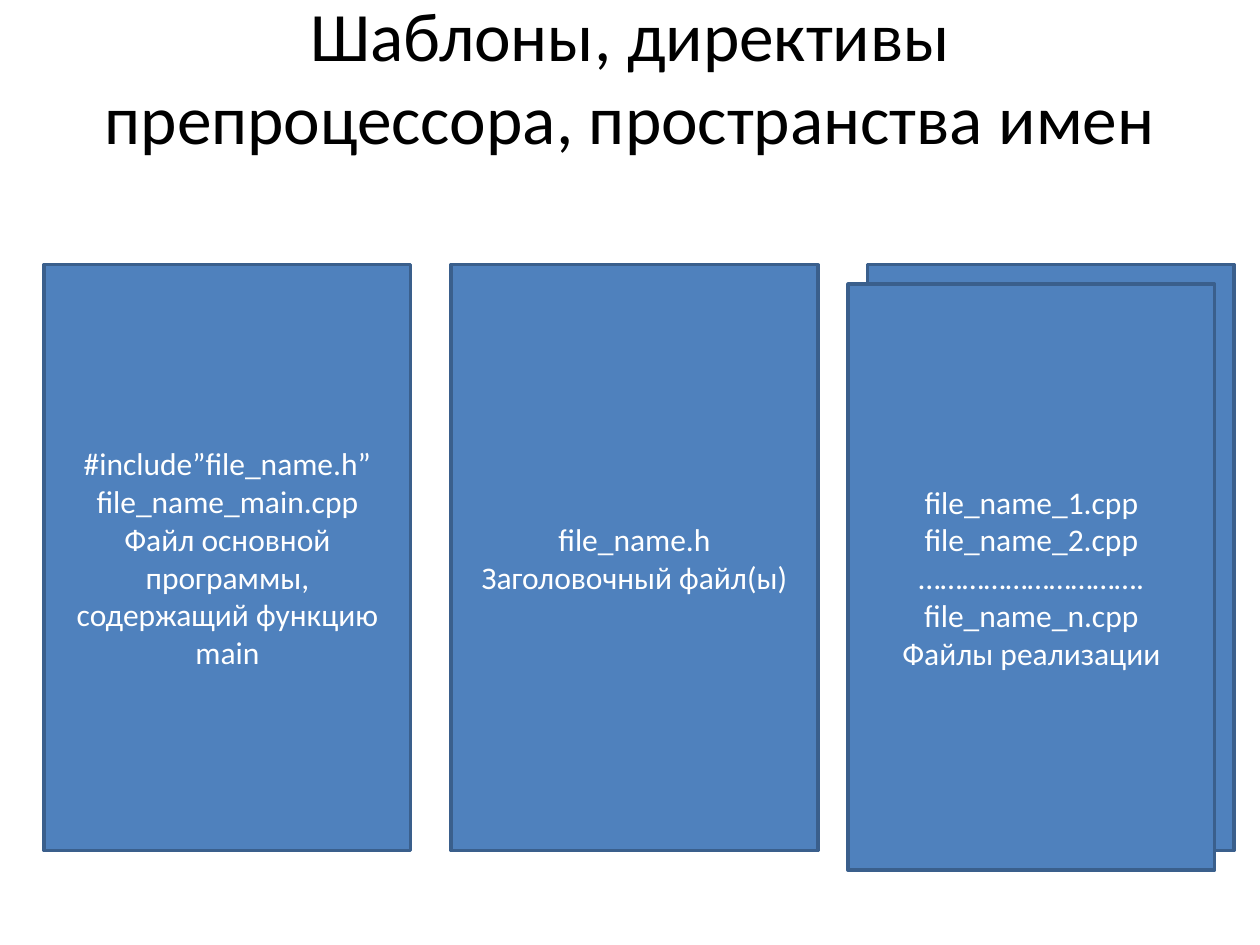
from pptx import Presentation
from pptx.dml.color import RGBColor
from pptx.enum.shapes import MSO_SHAPE as Shape
from pptx.enum.text import MSO_ANCHOR as Anchor, MSO_AUTO_SIZE as AutoSize, PP_ALIGN as Align
from pptx.util import Pt

BLACK = RGBColor(0x00, 0x00, 0x00)
WHITE = RGBColor(0xFF, 0xFF, 0xFF)
BLUE = RGBColor(0x4F, 0x81, 0xBD)
DARK_BLUE = RGBColor(0x3A, 0x5F, 0x8C)
FONT = "Calibri"


def format_paragraph(paragraph, size, color):
    paragraph.alignment = Align.CENTER
    paragraph.font.name = FONT
    paragraph.font.size = Pt(size)
    paragraph.font.color.rgb = color


presentation = Presentation()
presentation.slide_width = Pt(720)
presentation.slide_height = Pt(540)
slide = presentation.slides.add_slide(presentation.slide_layouts[5])

title = slide.shapes.title
title.left, title.top, title.width, title.height = Pt(36), Pt(21.6), Pt(648), Pt(90)
title.text_frame.text = "Шаблоны, директивы препроцессора, пространства имен"
title.text_frame.auto_size = AutoSize.NONE
title.text_frame.vertical_anchor = Anchor.MIDDLE
title_paragraph = title.text_frame.paragraphs[0]
title_paragraph.add_line_break()
format_paragraph(title_paragraph, 39.6, BLACK)

CARD_WIDTH, CARD_HEIGHT = 209.5, 334.8
CARD_TOP = 151.2
STACK_OFFSET = 11.2

cards = [
    (25.2, CARD_TOP, [
        "#include”file_name.h”",
        "file_name_main.cpp",
        "Файл основной программы, содержащий функцию main",
    ]),
    (257.8, CARD_TOP, ["file_name.h", "Заголовочный файл(ы)"]),
    (484.6 + STACK_OFFSET, CARD_TOP, []),
    (484.6, CARD_TOP + STACK_OFFSET, [
        "file_name_1.cpp",
        "file_name_2.cpp",
        "………………………….",
        "file_name_n.cpp",
        "Файлы реализации",
    ]),
]

for left, top, lines in cards:
    card = slide.shapes.add_shape(
        Shape.RECTANGLE, Pt(left), Pt(top), Pt(CARD_WIDTH), Pt(CARD_HEIGHT))
    card.shadow.inherit = False
    card.fill.solid()
    card.fill.fore_color.rgb = BLUE
    card.line.color.rgb = DARK_BLUE
    card.line.width = Pt(2)
    if lines:
        card.text_frame.text = "\n".join(lines)
        card.text_frame.word_wrap = True
        card.text_frame.vertical_anchor = Anchor.MIDDLE
        for paragraph in card.text_frame.paragraphs:
            format_paragraph(paragraph, 18, WHITE)

presentation.save("out.pptx")
